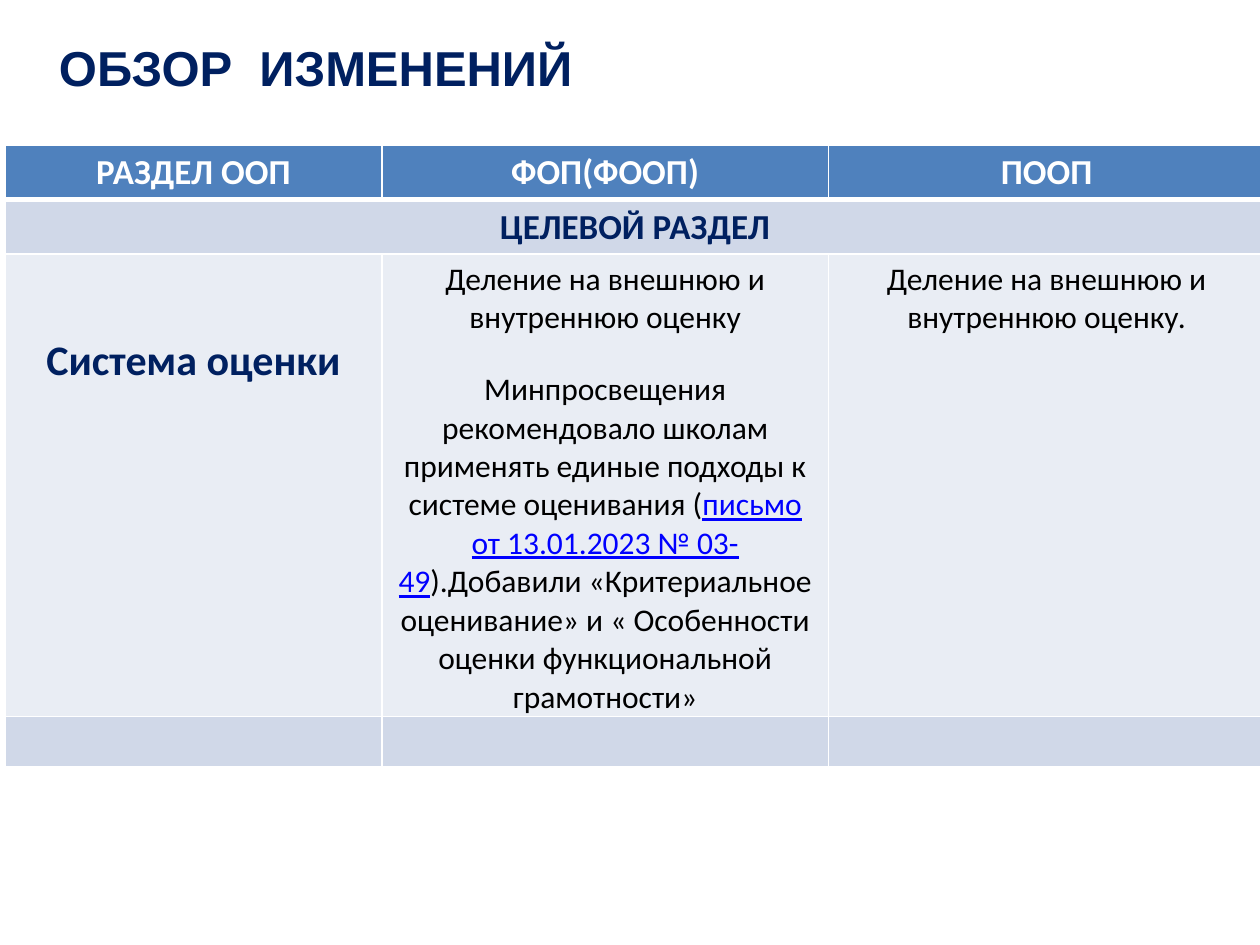
from dataclasses import dataclass

from lxml import etree
from pptx import Presentation
from pptx.dml.color import RGBColor
from pptx.enum.text import MSO_AUTO_SIZE, PP_ALIGN
from pptx.oxml.ns import qn
from pptx.util import Cm, Pt

CENTER = PP_ALIGN.CENTER
GROW = MSO_AUTO_SIZE.SHAPE_TO_FIT_TEXT


@dataclass(frozen=True)
class Theme:
    navy: str = "002060"
    white: str = "FFFFFF"
    black: str = "000000"
    link: str = "0000FF"
    header: str = "4F81BD"
    band: str = "D0D8E8"
    pale: str = "E9EDF4"
    title_size: int = 28
    topic_size: int = 24
    head_size: int = 20
    body_size: int = 18


theme = Theme()


def add_span(para, text, color, size, name="Calibri", **formats):
    span = para.add_run()
    span.text = text
    span.font.color.rgb = RGBColor.from_string(color)
    for key, value in {"name": name, "size": Pt(size), **formats}.items():
        setattr(span.font, key, value)


def add_border(cell, side, position, width):
    line = etree.Element(qn(f"a:ln{side}"), w=str(Pt(width)))
    fill = etree.SubElement(line, qn("a:solidFill"))
    etree.SubElement(fill, qn("a:srgbClr"), val=theme.white)
    cell._tc.get_or_add_tcPr().insert(position, line)


deck = Presentation()
deck.slide_width, deck.slide_height = Cm(25.4), Cm(19.05)
slide = deck.slides.add_slide(deck.slide_layouts[6])

box = slide.shapes.add_textbox(Cm(0.94), Cm(0.64), Cm(23.5), Cm(1.45))
box.text_frame.word_wrap = True
box.text_frame.auto_size = GROW
add_span(box.text_frame.paragraphs[0], "ОБЗОР  ИЗМЕНЕНИЙ",
         theme.navy, theme.title_size, "Arial", bold=True)

widths = [7.6, 9, 8.8]
heights = [1.07, 1.07, 9.32, 1.02]
row_fills = [theme.header, theme.band, theme.pale, theme.band]
frame = slide.shapes.add_table(len(heights), len(widths), Cm(0.1), Cm(2.92),
                               Cm(sum(widths)), Cm(sum(heights)))
table = frame.table
for column, width in zip(table.columns, widths):
    column.width = Cm(width)
for row, height in zip(table.rows, heights):
    row.height = Cm(height)

for row_index, color in enumerate(row_fills):
    for column_index in range(len(widths)):
        cell = table.cell(row_index, column_index)
        cell.fill.solid()
        cell.fill.fore_color.rgb = RGBColor.from_string(color)
        border_widths = {"L": 1, "R": 1,
                         "T": 3 if row_index == 1 else 1,
                         "B": 3 if row_index == 0 else 1}
        for position, (side, width) in enumerate(border_widths.items()):
            add_border(cell, side, position, width)
        cell.text_frame.paragraphs[0].alignment = CENTER

table.cell(1, 0).merge(table.cell(1, 2))
table.cell(2, 0).margin_top = Cm(1.65)

labels = [
    (0, 0, "РАЗДЕЛ ООП", theme.white, theme.head_size, True),
    (0, 1, "ФОП(ФООП)", theme.white, theme.head_size, True),
    (0, 2, "ПООП", theme.white, theme.head_size, True),
    (1, 0, "ЦЕЛЕВОЙ РАЗДЕЛ", theme.navy, theme.head_size, True),
    (2, 0, "Система оценки", theme.navy, theme.topic_size, True),
    (2, 1, "Деление на внешнюю и внутреннюю оценку", theme.black, theme.body_size, False),
    (2, 2, "Деление на внешнюю и внутреннюю оценку.", theme.black, theme.body_size, False),
]
for row_index, column_index, text, color, size, bold in labels:
    para = table.cell(row_index, column_index).text_frame.paragraphs[0]
    add_span(para, text, color, size, bold=bold)

para = table.cell(2, 1).text_frame.add_paragraph()
para.alignment = CENTER
para.space_before = Pt(19)
letter_parts = [
    ("Минпросвещения рекомендовало школам применять единые подходы "
     "к системе оценивания (", theme.black, False),
    ("письмо от 13.01.2023 № 03-49", theme.link, True),
    (").Добавили «Критериальное оценивание» и « Особенности оценки "
     "функциональной грамотности»", theme.black, False),
]
for text, color, underline in letter_parts:
    add_span(para, text, color, theme.body_size, bold=False, underline=underline)

deck.save("out.pptx")
